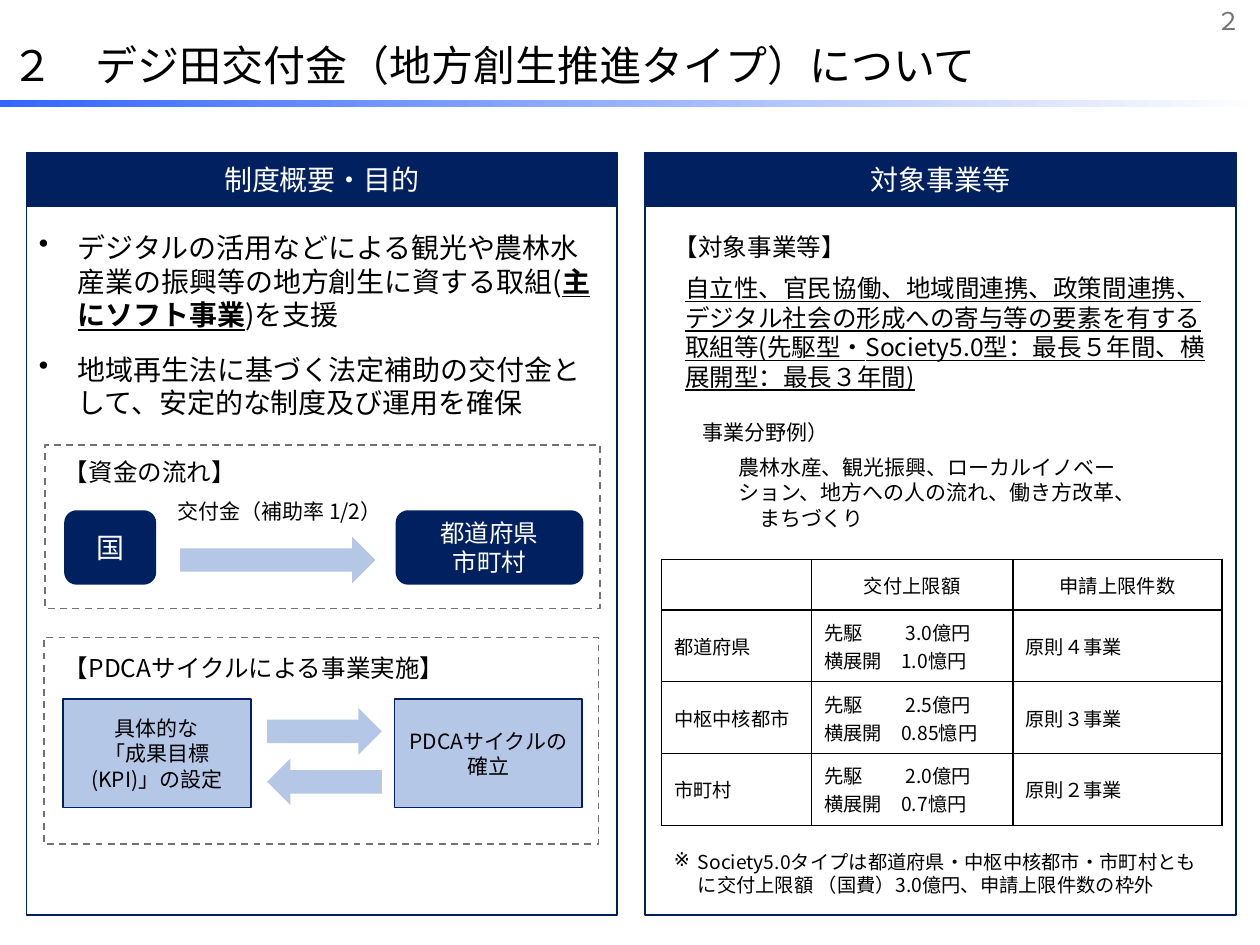
"""Build the slide on the regional revitalisation grant programme."""
from lxml import etree
from pptx import Presentation
from pptx.dml.color import RGBColor
from pptx.enum.dml import MSO_LINE
from pptx.enum.shapes import MSO_SHAPE
from pptx.enum.text import MSO_ANCHOR, MSO_AUTO_SIZE, PP_ALIGN
from pptx.oxml.ns import qn
from pptx.util import Inches, Pt

RECT, ROUND, ARROW = MSO_SHAPE.RECTANGLE, MSO_SHAPE.ROUNDED_RECTANGLE, MSO_SHAPE.RIGHT_ARROW
LEFT, CENTER = PP_ALIGN.LEFT, PP_ALIGN.CENTER
TOP, MIDDLE = MSO_ANCHOR.TOP, MSO_ANCHOR.MIDDLE
FIT, DASH = MSO_AUTO_SIZE.SHAPE_TO_FIT_TEXT, MSO_LINE.DASH
FONT = "Noto Sans CJK JP"
NAVY, PALE, GRAY, BLACK, WHITE = "002060", "B4C7E7", "767171", "000000", "FFFFFF"


def write(tf, text, size=12, color=BLACK, align=LEFT, underline=False,
          bullet=None, indent=0, before=0):
    """Fill a text frame; ** marks bold underlined words."""
    tf.word_wrap = True
    for i, line in enumerate(text.split("\n")):
        p = tf.add_paragraph() if i else tf.paragraphs[0]
        p.alignment = align
        if i and before:
            p.space_before = Pt(before)
        if bullet:
            pPr = p._p.get_or_add_pPr()
            pPr.set("marL", str(Inches(indent)))
            pPr.set("indent", str(-Inches(indent)))
            etree.SubElement(pPr, qn("a:buChar"), char=bullet)
        for j, part in enumerate(line.split("**")):
            r = p.add_run()
            r.text = part
            r.font.size = Pt(size)
            r.font.name = FONT
            r.font.color.rgb = RGBColor.from_string(color)
            r.font.bold = j % 2 == 1
            r.font.underline = underline or j % 2 == 1
            etree.SubElement(r._r.get_or_add_rPr(), qn("a:ea"), typeface=FONT)


def add_box(shapes, kind, at, text="", fill=None, line=None, anchor=MIDDLE, **fmt):
    """Add a preset shape, or a text box when kind is None."""
    x, y, w, h = map(Inches, at)
    if kind is None:
        sp = shapes.add_textbox(x, y, w, h)
        anchor = fmt.pop("box_anchor", TOP)
        sp.text_frame.auto_size = FIT
    else:
        sp = shapes.add_shape(kind, x, y, w, h)
        sp.shadow.inherit = False
        if fill:
            sp.fill.solid()
            sp.fill.fore_color.rgb = RGBColor.from_string(fill)
        else:
            sp.fill.background()
        if line:
            sp.line.color.rgb = RGBColor.from_string(line)
            sp.line.width = Pt(1)
        else:
            sp.line.fill.background()
    if text:
        sp.text_frame.vertical_anchor = anchor
        write(sp.text_frame, text, **fmt)
    return sp


prs = Presentation()
prs.slide_width, prs.slide_height = Inches(10), Inches(7.5)
s = prs.slides.add_slide(prs.slide_layouts[6])

rule = add_box(s.shapes, RECT, (-0.01, 0.79, 10.01, 0.06))
rule.fill.gradient()
rule.fill.gradient_angle = 0
for stop, color in zip(rule.fill.gradient_stops, ("3366FF", WHITE)):
    stop.color.rgb = RGBColor.from_string(color)
add_box(s.shapes, None, (9.52, 0, 0.46, 0.34), "２", size=14, color=GRAY, align=CENTER)
add_box(s.shapes, None, (-0.01, 0.26, 10, 0.5), "２　デジ田交付金（地方創生推進タイプ）について",
        size=24, box_anchor=MIDDLE)

for x, heading in ((0.21, "制度概要・目的"), (5.12, "対象事業等")):
    add_box(s.shapes, RECT, (x, 1.45, 4.69, 5.81), line=NAVY)
    add_box(s.shapes, RECT, (x, 1.21, 4.69, 0.43), heading, fill=NAVY, line=NAVY,
            size=16, color=WHITE, align=CENTER)

add_box(s.shapes, None, (0.21, 1.78, 4.69, 1.61),
        "デジタルの活用などによる観光や農林水産業の振興等の地方創生に資する取組("
        "**主にソフト事業**)を支援\n"
        "地域再生法に基づく法定補助の交付金として、安定的な制度及び運用を確保",
        size=16, bullet="•", indent=0.31, before=12)

flow = s.shapes.add_group_shape().shapes
for x, w, size, name in ((0.51, 0.73, 16, "国"), (3.14, 1.49, 14, "都道府県\n市町村")):
    add_box(flow, ROUND, (x, 4.05, w, 0.59), name, fill=NAVY,
            size=size, color=WHITE, align=CENTER)
add_box(flow, ARROW, (1.43, 4.26, 1.55, 0.37), fill=PALE)
add_box(flow, None, (1.31, 3.91, 2.09, 0.3), "交付金（補助率 1/2）")
add_box(flow, None, (0.41, 3.58, 4.27, 0.34), "【資金の流れ】", size=14)
add_box(flow, RECT, (0.36, 3.53, 4.4, 1.3), line=GRAY).line.dash_style = DASH

cycle = s.shapes.add_group_shape().shapes
for x, name in ((0.5, "具体的な\n「成果目標(KPI)」の設定"), (3.13, "PDCAサイクルの\n確立")):
    add_box(cycle, RECT, (x, 5.55, 1.49, 0.86), name, fill=PALE, line=NAVY, align=CENTER)
for y, angle in ((5.62, 0), (6.02, 180)):
    add_box(cycle, ARROW, (2.12, y, 0.91, 0.37), fill=PALE).rotation = angle
add_box(cycle, None, (0.41, 5.13, 4.27, 0.34), "【PDCAサイクルによる事業実施】", size=14)
add_box(cycle, RECT, (0.35, 5.06, 4.4, 1.64), line=GRAY).line.dash_style = DASH

add_box(s.shapes, None, (5.25, 1.79, 4.27, 0.34), "【対象事業等】", size=14)
add_box(s.shapes, None, (5.34, 2.12, 4.41, 1.04),
        "自立性、官民協働、地域間連携、政策間連携、デジタル社会の形成への寄与等の要素を有する"
        "取組等(先駆型・Society5.0型：最長５年間、横展開型：最長３年間)",
        size=14, underline=True)
add_box(s.shapes, None, (5.48, 3.28, 1.22, 0.3), "事業分野例）")
add_box(s.shapes, None, (5.76, 3.56, 3.4, 0.5),
        "農林水産、観光振興、ローカルイノベーション、地方への人の流れ、働き方改革、　まちづくり")

rows = [("", "交付上限額", "申請上限件数")]
for name, lead, spread, count in (("都道府県", "3.0", "1.0", "４"),
                                  ("中枢中核都市", "2.5", "0.85", "３"),
                                  ("市町村", "2.0", "0.7", "２")):
    rows.append((name, f"先駆　　 {lead}億円\n横展開　{spread}憶円", f"原則{count}事業"))
table = s.shapes.add_table(4, 3, Inches(5.25), Inches(4.44), Inches(4.45), Inches(2.1)).table
table.first_row = table.horz_banding = False
for col, w in zip(table.columns, (1.19, 1.6, 1.66)):
    col.width = Inches(w)
for i, row in enumerate(rows):
    table.rows[i].height = Inches(0.57 if i else 0.4)
    for j, text in enumerate(row):
        cell = table.cell(i, j)
        cell.vertical_anchor = MIDDLE
        tcPr = cell._tc.get_or_add_tcPr()
        for side in ("a:lnL", "a:lnR", "a:lnT", "a:lnB"):
            ln = etree.SubElement(tcPr, qn(side), w=str(Pt(1)))
            etree.SubElement(etree.SubElement(ln, qn("a:solidFill")), qn("a:srgbClr"), val=BLACK)
        cell.fill.background()
        if text:
            write(cell.text_frame, text, size=11, align=LEFT if i else CENTER)

add_box(s.shapes, None, (5.25, 6.7, 4.45, 0.47),
        "Society5.0タイプは都道府県・中枢中核都市・市町村ともに交付上限額 （国費）3.0億円、"
        "申請上限件数の枠外", size=11, bullet="※", indent=0.19)

prs.save("out.pptx")
